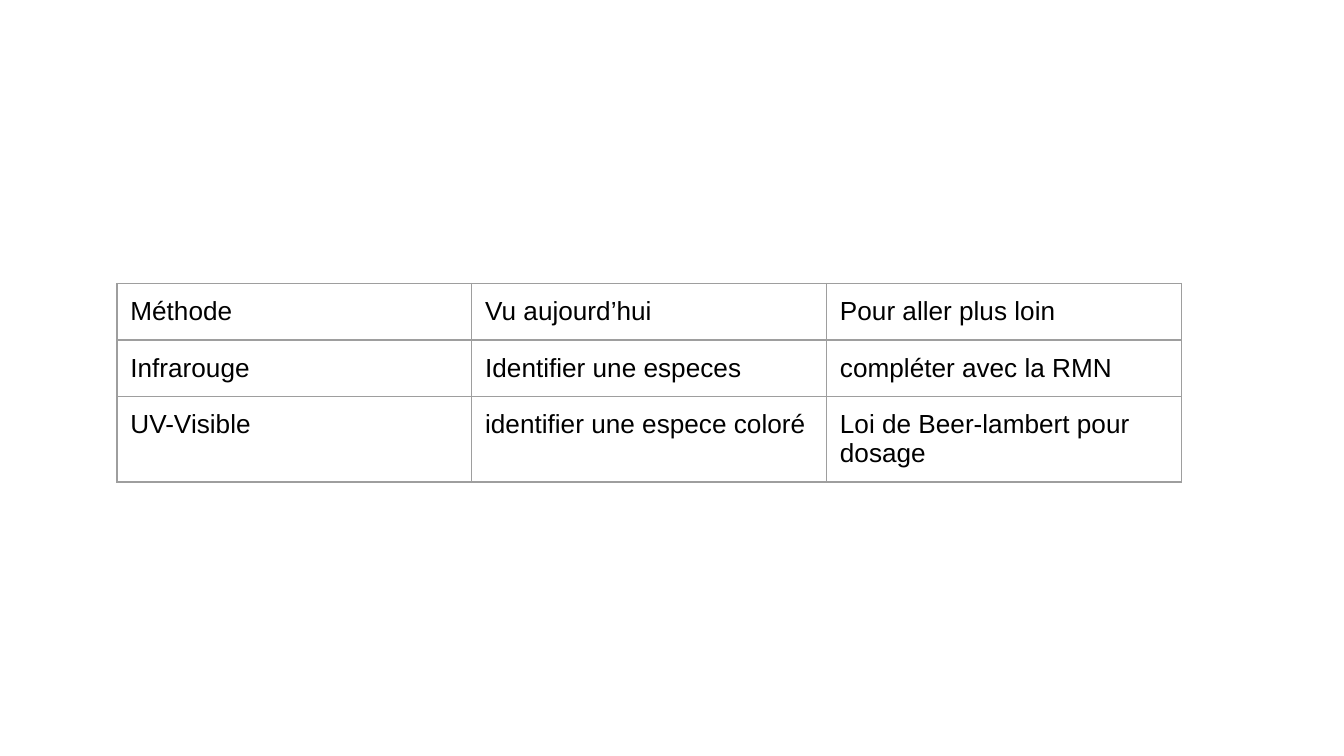
from dataclasses import dataclass

from lxml.etree import SubElement
from pptx import Presentation
from pptx.dml.color import RGBColor
from pptx.oxml.ns import qn
from pptx.util import Inches, Pt

# Content
ROWS = [
    ("Méthode", "Vu aujourd’hui", "Pour aller plus loin"),
    ("Infrarouge", "Identifier une especes", "compléter avec la RMN"),
    ("UV-Visible", "identifier une espece coloré", "Loi de Beer-lambert pour dosage"),
]


@dataclass(frozen=True)
class Theme:
    font: str = "Arial"
    size: float = 14
    ink: str = "000000"
    border: str = "9E9E9E"
    border_width: float = 0.75


THEME = Theme()

# Grid, in inches, on a 16:9 slide
SLIDE_WIDTH = 10
SLIDE_HEIGHT = SLIDE_WIDTH * 9 / 16
LEFT, TOP = 0.87, 2.11
COLUMN_WIDTH, ROW_HEIGHT = 2.64, 0.42
PADDING = 0.1


def draw_borders(cell):
    properties = cell._tc.get_or_add_tcPr()
    for side in ("a:lnL", "a:lnR", "a:lnT", "a:lnB"):
        line = SubElement(properties, qn(side), w=str(Pt(THEME.border_width)))
        fill = SubElement(line, qn("a:solidFill"))
        SubElement(fill, qn("a:srgbClr"), val=THEME.border)


def fill_cell(cell, text):
    cell.margin_left = cell.margin_right = Inches(PADDING)
    cell.margin_top = cell.margin_bottom = Inches(PADDING)
    draw_borders(cell)
    cell.fill.background()
    span = cell.text_frame.paragraphs[0].add_run()
    span.text = text
    span.font.name = THEME.font
    span.font.size = Pt(THEME.size)
    span.font.color.rgb = RGBColor.from_string(THEME.ink)


def main():
    deck = Presentation()
    deck.slide_width, deck.slide_height = Inches(SLIDE_WIDTH), Inches(SLIDE_HEIGHT)
    page = deck.slides.add_slide(deck.slide_layouts[6])

    # Methods table
    row_count, column_count = len(ROWS), len(ROWS[0])
    table = page.shapes.add_table(
        row_count, column_count, Inches(LEFT), Inches(TOP),
        Inches(COLUMN_WIDTH * column_count), Inches(ROW_HEIGHT * row_count),
    ).table
    table.first_row = table.horz_banding = False
    for row, texts in enumerate(ROWS):
        for column, text in enumerate(texts):
            fill_cell(table.cell(row, column), text)

    deck.save("out.pptx")


if __name__ == "__main__":
    main()
